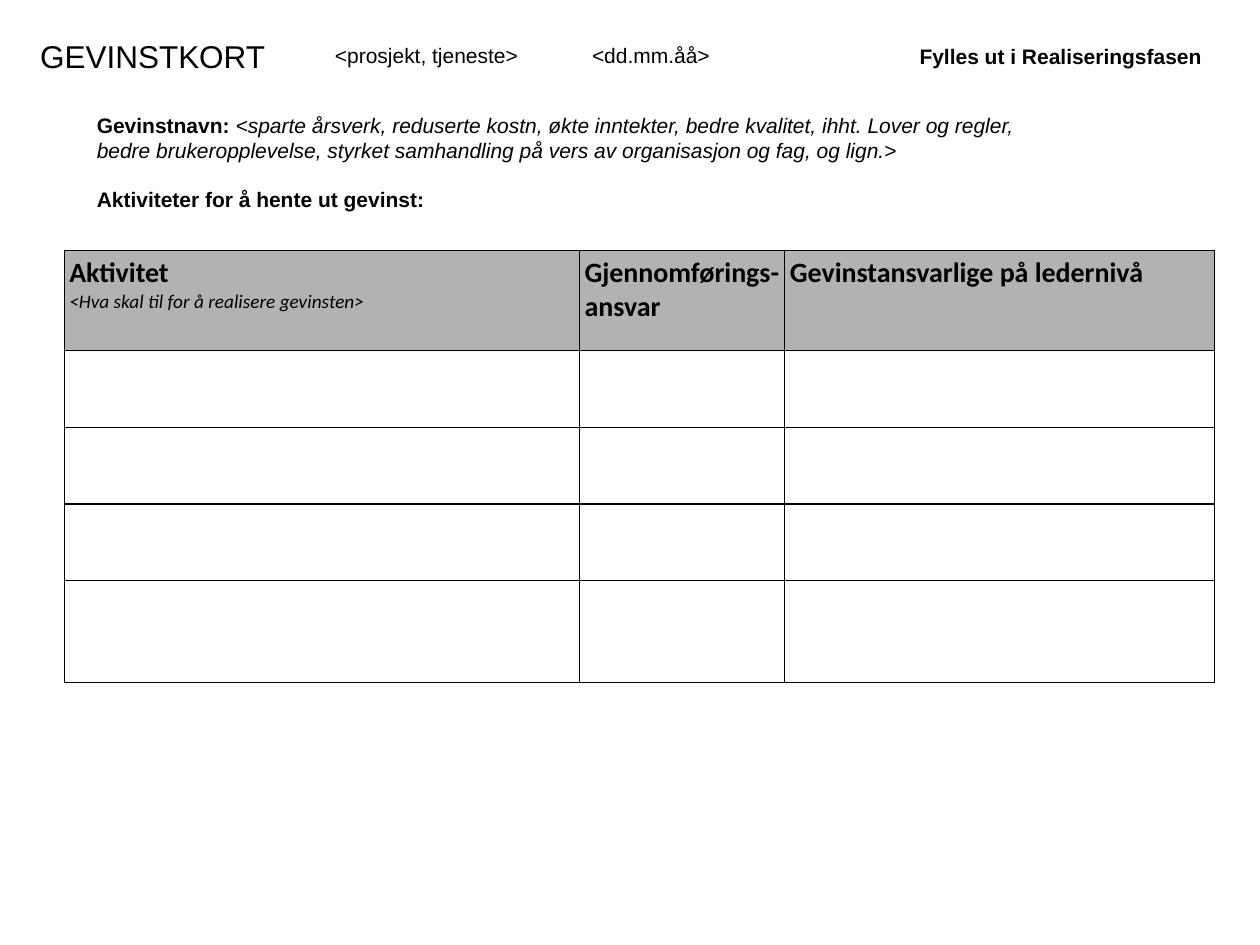
from pptx import Presentation
from pptx.dml.color import RGBColor
from pptx.enum.shapes import MSO_SHAPE
from pptx.enum.text import MSO_ANCHOR, PP_ALIGN
from pptx.oxml.ns import qn
from pptx.util import Inches, Pt
from lxml.etree import SubElement

COLORS = {"text": "000000", "page": "FFFFFF", "header": "B2B2B2", "border": "000000"}
COLUMN_WIDTHS = [4.09, 1.63, 3.41]
ROW_HEIGHTS = [0.79, 0.61, 0.61, 0.61, 0.81]


def rgb(name):
    return RGBColor.from_string(COLORS[name])


def style_font(font, size, name="Arial", bold=False, italic=False):
    font.size, font.name, font.bold, font.italic = Pt(size), name, bold, italic
    font.color.rgb = rgb("text")


def add_run(paragraph, text, size, **style):
    run = paragraph.add_run()
    run.text = text
    style_font(run.font, size, **style)


def add_text_box(slide, left, top, width, height, wrap=True):
    box = slide.shapes.add_textbox(Inches(left), Inches(top), Inches(width), Inches(height))
    box.text_frame.word_wrap = wrap
    return box.text_frame


def add_tab_stop(paragraph, position):
    tabs = SubElement(paragraph._p.get_or_add_pPr(), qn("a:tabLst"))
    SubElement(tabs, qn("a:tab"), pos=str(Inches(position)), algn="l")


def add_title(slide):
    bar = slide.shapes.add_shape(
        MSO_SHAPE.RECTANGLE, Inches(0.22), Inches(0.05), Inches(9.61), Inches(0.78))
    bar.shadow.inherit = False
    bar.fill.solid()
    bar.fill.fore_color.rgb = rgb("page")
    bar.line.fill.background()
    bar.text_frame.vertical_anchor = MSO_ANCHOR.MIDDLE
    paragraph = bar.text_frame.paragraphs[0]
    paragraph.text = "GEVINSTKORT"
    paragraph.alignment = PP_ALIGN.LEFT
    style_font(paragraph.font, 18)


def add_project_line(slide):
    paragraph = add_text_box(slide, 2.56, 0.29, 7.69, 0.3).paragraphs[0]
    add_tab_stop(paragraph, 2.04)
    paragraph.text = "<prosjekt, tjeneste>\t<dd.mm.åå>"
    style_font(paragraph.font, 12)


def add_phase_note(slide):
    paragraph = add_text_box(slide, 7.2, 0.3, 2.47, 0.3, wrap=False).paragraphs[0]
    paragraph.text = "Fylles ut i Realiseringsfasen"
    style_font(paragraph.font, 12, bold=True)


def add_benefit_text(slide):
    frame = add_text_box(slide, 0.67, 0.84, 7.56, 0.91)
    benefit = frame.paragraphs[0]
    add_run(benefit, "Gevinstnavn: ", 12, bold=True)
    add_run(benefit, "<sparte årsverk, reduserte kostn, økte inntekter, bedre kvalitet, "
            "ihht. Lover og regler, bedre brukeropplevelse, styrket samhandling på vers av "
            "organisasjon og fag, og lign.>", 12, italic=True)
    activities = frame.add_paragraph()
    activities.text = "Aktiviteter for å hente ut gevinst:"
    activities.space_before = Pt(14)
    style_font(activities.font, 12, bold=True)


def style_cell(cell, fill):
    cell.margin_left = cell.margin_right = cell.margin_top = cell.margin_bottom = Inches(0.04)
    properties = cell._tc.get_or_add_tcPr()
    for side in ("lnL", "lnR", "lnT", "lnB"):
        line = SubElement(properties, qn(f"a:{side}"), w=str(Pt(0.75)))
        SubElement(SubElement(line, qn("a:solidFill")), qn("a:srgbClr"), val=COLORS["border"])
    cell.fill.solid()
    cell.fill.fore_color.rgb = rgb(fill)


def add_activity_table(slide):
    table = slide.shapes.add_table(
        len(ROW_HEIGHTS), len(COLUMN_WIDTHS), Inches(0.51), Inches(1.99),
        Inches(sum(COLUMN_WIDTHS)), Inches(sum(ROW_HEIGHTS))).table
    for column, width in zip(table.columns, COLUMN_WIDTHS):
        column.width = Inches(width)
    for index, (row, height) in enumerate(zip(table.rows, ROW_HEIGHTS)):
        row.height = Inches(height)
        for cell in row.cells:
            style_cell(cell, "page" if index else "header")
    headings = ["Aktivitet", "Gjennomførings-ansvar", "Gevinstansvarlige på ledernivå"]
    for cell, heading in zip(table.rows[0].cells, headings):
        add_run(cell.text_frame.paragraphs[0], heading, 16, name="Calibri", bold=True)
    activity = table.cell(0, 0).text_frame.paragraphs[0]
    activity.add_line_break()
    add_run(activity, "<Hva skal til for å realisere gevinsten>", 11, name="Calibri", italic=True)


def main():
    presentation = Presentation()
    presentation.slide_width, presentation.slide_height = Inches(10), Inches(7.5)
    slide = presentation.slides.add_slide(presentation.slide_layouts[6])
    add_title(slide)
    add_activity_table(slide)
    add_project_line(slide)
    add_phase_note(slide)
    add_benefit_text(slide)
    presentation.save("out.pptx")


if __name__ == "__main__":
    main()
